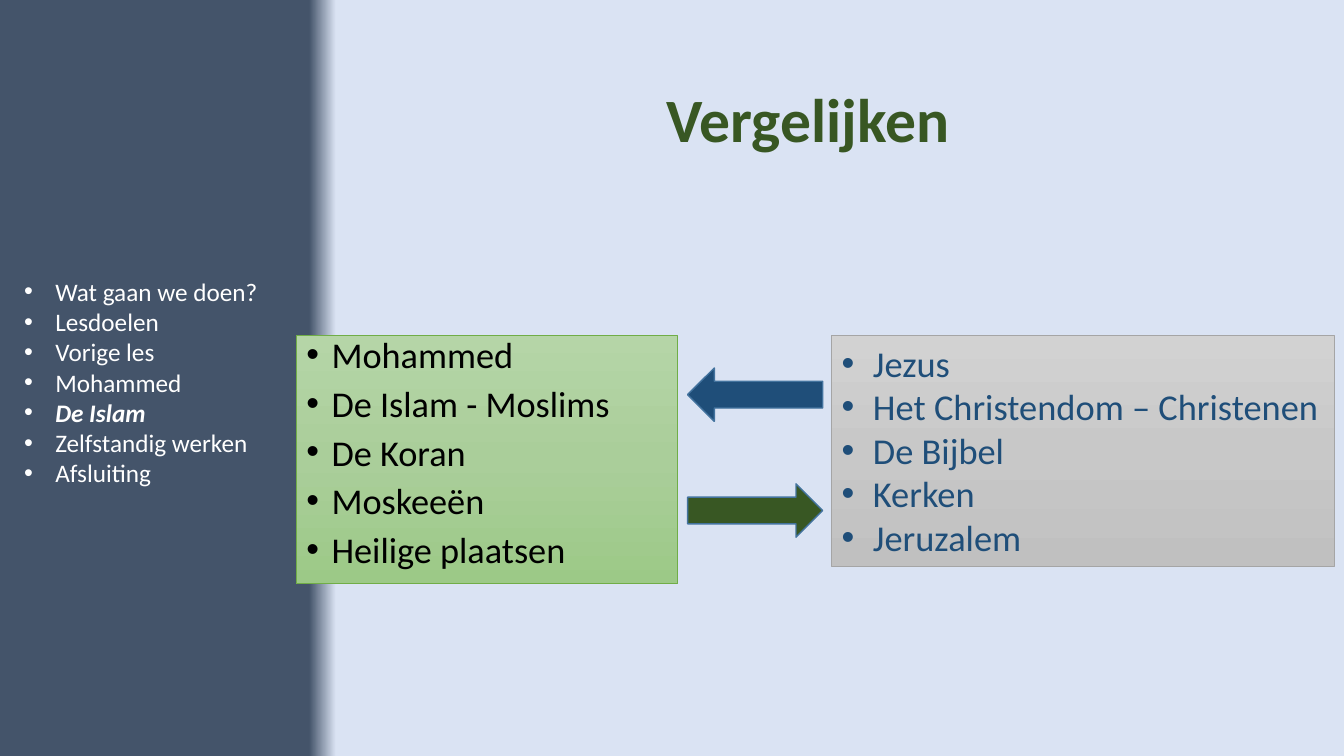
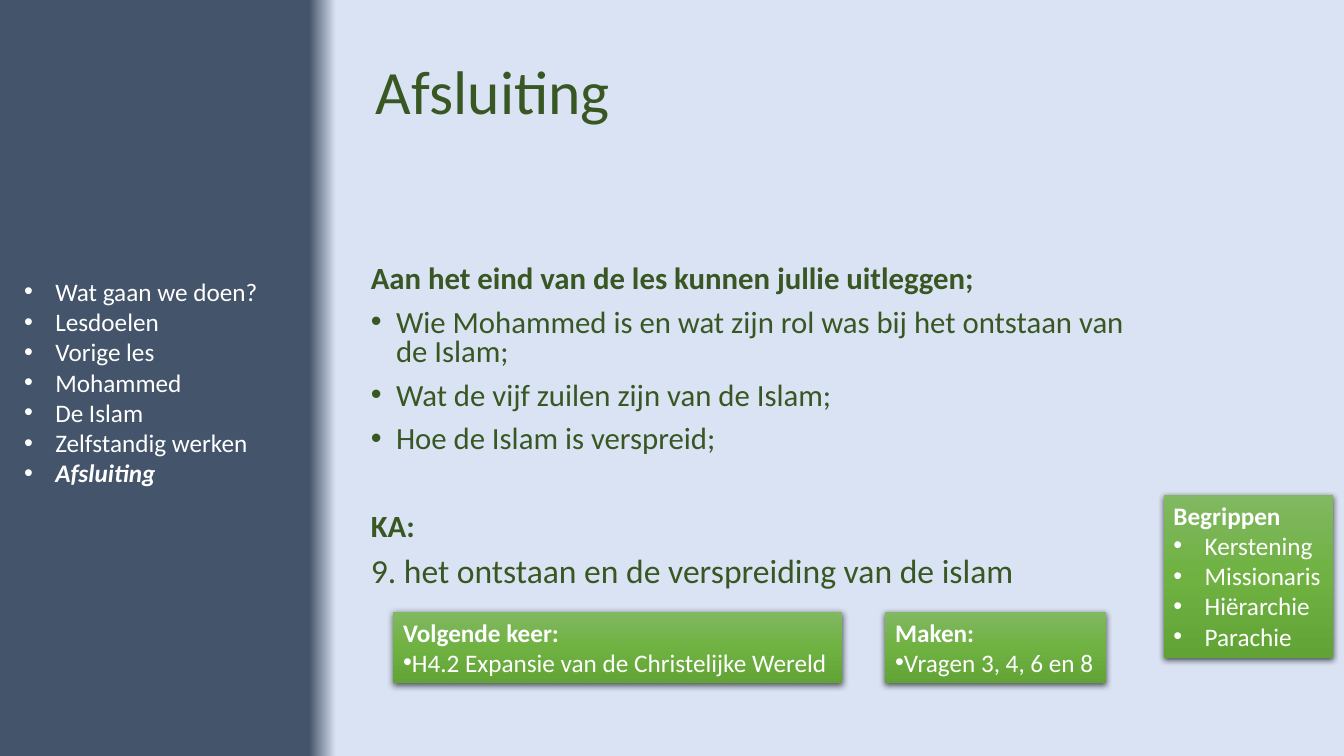
"""Build two lesson slides that share a gradient background and an agenda."""
from copy import deepcopy
from dataclasses import dataclass

from lxml.etree import SubElement
from pptx import Presentation
from pptx.dml.color import RGBColor
from pptx.enum.shapes import MSO_SHAPE as Preset
from pptx.enum.text import MSO_ANCHOR as Anchor, MSO_AUTO_SIZE as AutoSize, PP_ALIGN as Align
from pptx.oxml.ns import qn
from pptx.util import Inches, Pt


@dataclass(frozen=True)
class Theme:
    """Colours, gradients and type sizes of the lesson."""
    font: str = "Calibri"
    white: str = "FFFFFF"
    black: str = "000000"
    green: str = "385723"
    blue: str = "1F4E79"
    arrow_edge: str = "43739E"
    islam_edge: str = "70AD47"
    christian_edge: str = "A5A5A5"
    backdrop: tuple = ((23, "44546A"), (25, "DAE3F3"))
    islam_fill: tuple = ((0, "B5D5A7"), (50, "AACE9A"), (100, "9CC987"))
    christian_fill: tuple = ((0, "D2D2D2"), (50, "C8C8C8"), (100, "C0C0C0"))
    card_fill: tuple = ((0, "81B861"), (50, "6FB242"), (100, "62A336"))
    title_size: float = 44
    compare_size: float = 26
    goal_size: float = 22
    era_size: float = 24
    small_size: float = 18


THEME = Theme()
AGENDA = ("Wat gaan we doen?", "Lesdoelen", "Vorige les", "Mohammed",
          "De Islam", "Zelfstandig werken", "Afsluiting")


def rgb(code):
    """Turn a hex code into a colour."""
    return RGBColor.from_string(code)


def blend(fill, owner, stops, angle):
    """Give a fill a linear gradient with any number of stops."""
    fill.gradient()
    fill.gradient_angle = angle
    stop_list = owner.find(".//" + qn("a:gsLst"))
    while len(stop_list) < len(stops):
        stop_list.append(deepcopy(stop_list[0]))
    for stop, (position, colour) in zip(fill.gradient_stops, stops):
        stop.position = position / 100
        stop.color.rgb = rgb(colour)


def write(paragraph, text, size=THEME.small_size, colour=THEME.white, bold=False,
          italic=False, align=Align.LEFT, bullet=False, indent=0, leading=None, before=0):
    """Put formatted text in a paragraph."""
    paragraph.alignment = align
    paragraph.line_spacing = leading
    paragraph.space_before = Pt(before)
    run = paragraph.add_run()
    run.text = text
    font = run.font
    font.name, font.size, font.bold, font.italic = THEME.font, Pt(size), bold, italic
    font.color.rgb = rgb(colour)
    if bullet:
        properties = paragraph._p.get_or_add_pPr()
        properties.set("marL", str(Inches(indent)))
        properties.set("indent", str(-Inches(indent)))
        SubElement(properties, qn("a:buFont"), typeface="Arial")
        SubElement(properties, qn("a:buChar"), char="•")


class LessonDeck:
    """Holds the theme and the current slide."""

    def __init__(self, theme):
        """Start an empty widescreen deck."""
        self.theme = theme
        self.deck = Presentation()
        self.deck.slide_width, self.deck.slide_height = Inches(13.33), Inches(7.5)
        self.slide = None

    def new_slide(self, current):
        """Add a slide with the background and the agenda."""
        self.slide = self.deck.slides.add_slide(self.deck.slide_layouts[6])
        blend(self.slide.background.fill, self.slide.element, self.theme.backdrop, 0)
        self.text((0.14, 2.69, 2.55, 2.22),
                  [(topic, dict(bold=topic == current, italic=topic == current))
                   for topic in AGENDA],
                  wrap=False, bullet=True, indent=0.31)

    def fill_frame(self, frame, entries, wrap=True, grow=False, anchor=Anchor.TOP, **shared):
        """Write entries that share a format and may each adjust it."""
        frame.word_wrap = wrap
        frame.auto_size = AutoSize.SHAPE_TO_FIT_TEXT if grow or not wrap else AutoSize.NONE
        frame.vertical_anchor = anchor
        for number, (entry, changes) in enumerate(entries):
            paragraph = frame.add_paragraph() if number else frame.paragraphs[0]
            write(paragraph, entry, **{**shared, **changes})

    def text(self, place, entries, **options):
        """Add a text box."""
        box = self.slide.shapes.add_textbox(*map(Inches, place))
        self.fill_frame(box.text_frame, entries, **options)

    def title(self, place, heading, **options):
        """Add the slide title."""
        self.text(place, [(heading, options)], anchor=Anchor.MIDDLE,
                  size=self.theme.title_size, colour=self.theme.green, leading=0.9)

    def shape(self, preset, place, edge=None, edge_width=0.5):
        """Add a preset shape without a shadow."""
        shape = self.slide.shapes.add_shape(preset, *map(Inches, place))
        shape.shadow.inherit = False
        if edge:
            shape.line.color.rgb = rgb(edge)
            shape.line.width = Pt(edge_width)
        else:
            shape.line.fill.background()
        return shape

    def panel(self, place, stops, entries, edge=None, **options):
        """Add a gradient rectangle with text."""
        panel = self.shape(Preset.RECTANGLE, place, edge)
        blend(panel.fill, panel.element, stops, 270)
        self.fill_frame(panel.text_frame, entries, **options)
        return panel

    def card(self, place, heading, points, indent=0):
        """Add a shadowed green card with a heading and bullets."""
        entries = [(heading, dict(bold=True))]
        entries += [(point, dict(bullet=True, indent=indent)) for point in points]
        card = self.panel(place, self.theme.card_fill, entries, wrap=False)
        effects = card.element.spPr.find(qn("a:effectLst"))
        shadow = SubElement(effects, qn("a:outerShdw"), blurRad=str(Pt(4.5)),
                            dist=str(Pt(1.5)), dir="5400000", algn="ctr", rotWithShape="0")
        colour = SubElement(shadow, qn("a:srgbClr"), val=self.theme.black)
        SubElement(colour, qn("a:alpha"), val="63000")

    def arrow(self, top, colour, rotation=0):
        """Add a block arrow between the compared panels."""
        arrow = self.shape(Preset.RIGHT_ARROW, (6.82, top, 1.34, 0.53),
                           self.theme.arrow_edge, 1)
        arrow.fill.solid()
        arrow.fill.fore_color.rgb = rgb(colour)
        arrow.rotation = rotation


def compare_slide(lesson):
    """Compare Islam with Christianity."""
    theme = lesson.theme
    lesson.new_slide("De Islam")
    lesson.title((3.3, 0.55, 9.43, 1.34), "Vergelijken", bold=True, align=Align.CENTER)
    islam = ("Mohammed", "De Islam - Moslims", "De Koran", "Moskeeën", "Heilige plaatsen")
    christianity = ("Jezus", "Het Christendom – Christenen", "De Bijbel", "Kerken", "Jeruzalem")
    lesson.panel((2.94, 3.33, 3.78, 2.46), theme.islam_fill,
                 [(aspect, {}) for aspect in islam], theme.islam_edge,
                 size=25.9, colour=theme.black, bullet=True, indent=0.25,
                 leading=0.8, before=10)
    lesson.panel((8.25, 3.33, 4.98, 2.29), theme.christian_fill,
                 [(aspect, {}) for aspect in christianity], theme.christian_edge,
                 grow=True, size=theme.compare_size, colour=theme.blue,
                 bullet=True, indent=0.31)
    lesson.arrow(4.8, theme.green)
    lesson.arrow(3.65, theme.blue, 180)


def closing_slide(lesson):
    """Sum up the goals, homework and terms."""
    theme = lesson.theme
    lesson.new_slide("Afsluiting")
    lesson.title((3.63, 0.21, 9.2, 1.45), "Afsluiting")
    lesson.card((3.9, 6.07, 4.45, 0.71), "Volgende keer:",
                ["H4.2 Expansie van de Christelijke Wereld"])
    lesson.card((8.78, 6.07, 2.19, 0.71), "Maken:", ["Vragen 3, 4, 6 en 8"])
    goal = dict(bullet=True, indent=0.25)
    lesson.text((3.58, 2.59, 7.9, 3.59), [
        ("Aan het eind van de les kunnen jullie uitleggen;", dict(bold=True)),
        ("Wie Mohammed is en wat zijn rol was bij het ontstaan van de Islam;", goal),
        ("Wat de vijf zuilen zijn van de Islam;", goal),
        ("Hoe de Islam is verspreid;", goal),
        ("KA:", dict(bold=True, before=41.5)),
        ("9. het ontstaan en de verspreiding van de islam", dict(size=theme.era_size)),
    ], size=theme.goal_size, colour=theme.green, leading=0.8, before=10)
    lesson.card((11.54, 4.91, 1.68, 1.62), "Begrippen",
                ["Kerstening", "Missionaris", "Hiërarchie", "Parachie"], indent=0.31)


def main():
    """Build and save the deck."""
    lesson = LessonDeck(THEME)
    compare_slide(lesson)
    closing_slide(lesson)
    lesson.deck.save("out.pptx")


if __name__ == "__main__":
    main()
